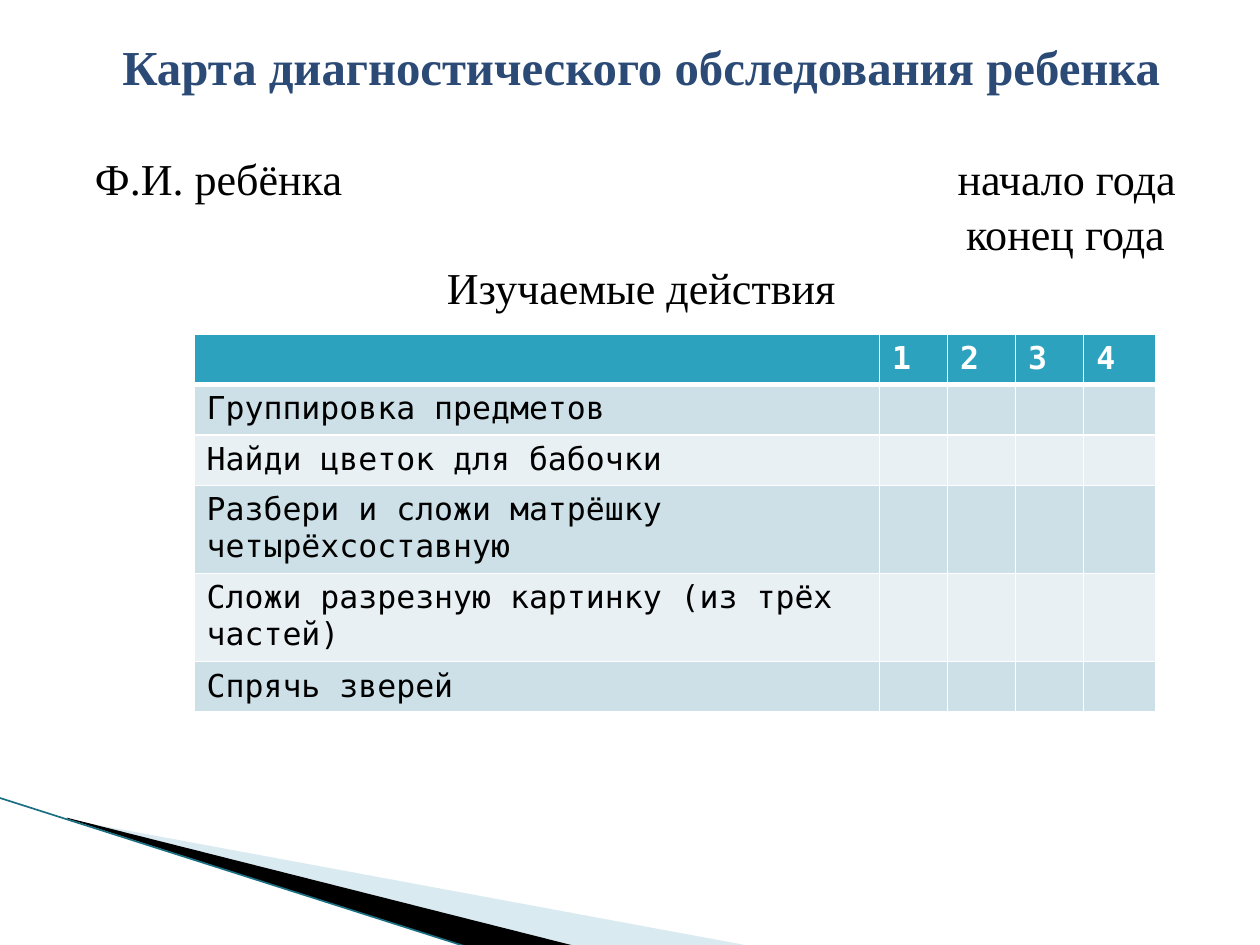
from lxml.etree import SubElement
from pptx import Presentation
from pptx.dml.color import RGBColor
from pptx.enum.shapes import MSO_CONNECTOR
from pptx.enum.text import MSO_ANCHOR, PP_ALIGN as Align
from pptx.oxml.ns import qn
from pptx.util import Pt

WHITE = RGBColor(0xFF, 0xFF, 0xFF)
BLACK = RGBColor(0, 0, 0)
NAVY = RGBColor(0x2B, 0x4A, 0x76)
TEAL = RGBColor(0x2D, 0xA2, 0xBF)
DARK_TEAL = RGBColor(0x1B, 0x6F, 0x82)
SKY = RGBColor(0xA0, 0xCB, 0xDC)
BANDS = (RGBColor(0xCD, 0xE0, 0xE8), RGBColor(0xE8, 0xF0, 0xF4))


class SlideBuilder:
    serif = "Times New Roman"
    mono = "DejaVu Sans Mono"
    table_size = 18

    def __init__(self, slide):
        self.slide = slide

    def polygon(self, points, color, opacity=100):
        builder = self.slide.shapes.build_freeform(
            Pt(points[0][0]), Pt(points[0][1]), scale=1.0)
        builder.add_line_segments([(Pt(x), Pt(y)) for x, y in points[1:]])
        shape = builder.convert_to_shape()
        shape.shadow.inherit = False
        shape.line.fill.background()
        shape.fill.solid()
        shape.fill.fore_color.rgb = color
        if opacity < 100:
            fill_color = shape.fill._xPr.find(qn("a:solidFill"))[0]
            SubElement(fill_color, qn("a:alpha"), val=str(opacity * 1000))

    def line(self, start, end, color, width):
        connector = self.slide.shapes.add_connector(
            MSO_CONNECTOR.STRAIGHT, *map(Pt, start + end))
        connector.line.color.rgb = color
        connector.line.width = Pt(width)
        SubElement(connector._element.spPr, qn("a:effectLst"))

    def run(self, paragraph, text, font, size, color, bold=False):
        run = paragraph.add_run()
        run.text = text
        run.font.name = font
        run.font.size = Pt(size)
        run.font.color.rgb = color
        run.font.bold = bold

    def heading(self, left, top, width, height, inset, lines):
        box = self.slide.shapes.add_textbox(*map(Pt, (left, top, width, height)))
        frame = box.text_frame
        frame.word_wrap = True
        frame.vertical_anchor = MSO_ANCHOR.TOP
        frame.margin_left = frame.margin_right = Pt(inset)
        frame.margin_top = frame.margin_bottom = 0
        for index, (parts, align, tab, before, size, color, bold) in enumerate(lines):
            paragraph = frame.add_paragraph() if index else frame.paragraphs[0]
            paragraph.alignment = align
            paragraph.space_before = Pt(before)
            if tab:
                tabs = SubElement(paragraph._p.get_or_add_pPr(), qn("a:tabLst"))
                SubElement(tabs, qn("a:tab"), pos=str(Pt(tab)), algn="r")
            for text in parts:
                self.run(paragraph, text, self.serif, size, color, bold)

    def border(self, cell, side, width):
        properties = cell._tc.get_or_add_tcPr()
        line = SubElement(properties, qn(f"a:ln{side}"), w=str(Pt(width)))
        fill = SubElement(line, qn("a:solidFill"))
        SubElement(fill, qn("a:srgbClr"), val=str(WHITE))

    def cell(self, cell, text, fill, color, bold, top, bottom):
        for side, width in zip("LRTB", (1, 1, top, bottom)):
            self.border(cell, side, width)
        cell.fill.solid()
        cell.fill.fore_color.rgb = fill
        paragraph = cell.text_frame.paragraphs[0]
        if text:
            self.run(paragraph, text, self.mono, self.table_size, color, bold)
        else:
            SubElement(paragraph._p, qn("a:endParaRPr"), sz="1200")

    def table(self, left, top, columns, heights, rows):
        table = self.slide.shapes.add_table(
            len(rows), len(columns), Pt(left), Pt(top),
            Pt(sum(columns)), Pt(sum(heights))).table
        table.first_row = table.horz_banding = False
        for column, width in zip(table.columns, columns):
            column.width = Pt(width)
        for index, (row, height, texts) in enumerate(zip(table.rows, heights, rows)):
            row.height = Pt(height)
            header = index == 0
            fill = TEAL if header else BANDS[(index - 1) % 2]
            color = WHITE if header else BLACK
            for cell, text in zip(row.cells, texts):
                self.cell(cell, text, fill, color, header,
                          top=3 if index == 1 else 1, bottom=3 if header else 1)


def main():
    presentation = Presentation()
    presentation.slide_width, presentation.slide_height = Pt(720), Pt(540)
    builder = SlideBuilder(presentation.slides.add_slide(presentation.slide_layouts[6]))

    # Corner decoration
    builder.polygon([(39.6, 468.5), (428.4, 540.5), (328.3, 540.5), (39.6, 468)], SKY, 40)
    builder.polygon([(38.2, 467.3), (329, 540.7), (267.8, 541.4), (38.9, 468)], BLACK)
    builder.line((-0.7, 455.8), (267.8, 541.4), DARK_TEAL, 0.95)

    # Title and child details
    body = (25.2, BLACK, False)
    builder.heading(42.5, 21, 648, 152, 11.8, [
        (["Карта диагностического обследования ребенка"],
         Align.CENTER, None, 0, 27.9, NAVY, True),
        (["Ф.И. ребёнка", "\tначало года"], Align.LEFT, 617.7, 32, *body),
        (["\tконец года"], Align.LEFT, 611.4, 1, *body),
        (["Изучаемые действия"], Align.CENTER, None, 1, *body),
    ])

    # Table of actions
    actions = [
        "Группировка предметов",
        "Найди цветок для бабочки",
        "Разбери и сложи матрёшку четырёхсоставную",
        "Сложи разрезную картинку (из трёх частей)",
        "Спрячь зверей",
    ]
    rows = [["", "1", "2", "3", "4"]] + [[action] + [""] * 4 for action in actions]
    builder.table(110.9, 190.8, [391.7, 38.9, 38.9, 38.9, 41],
                  [28, 28, 28, 49, 49, 28], rows)

    presentation.save("out.pptx")


if __name__ == "__main__":
    main()
